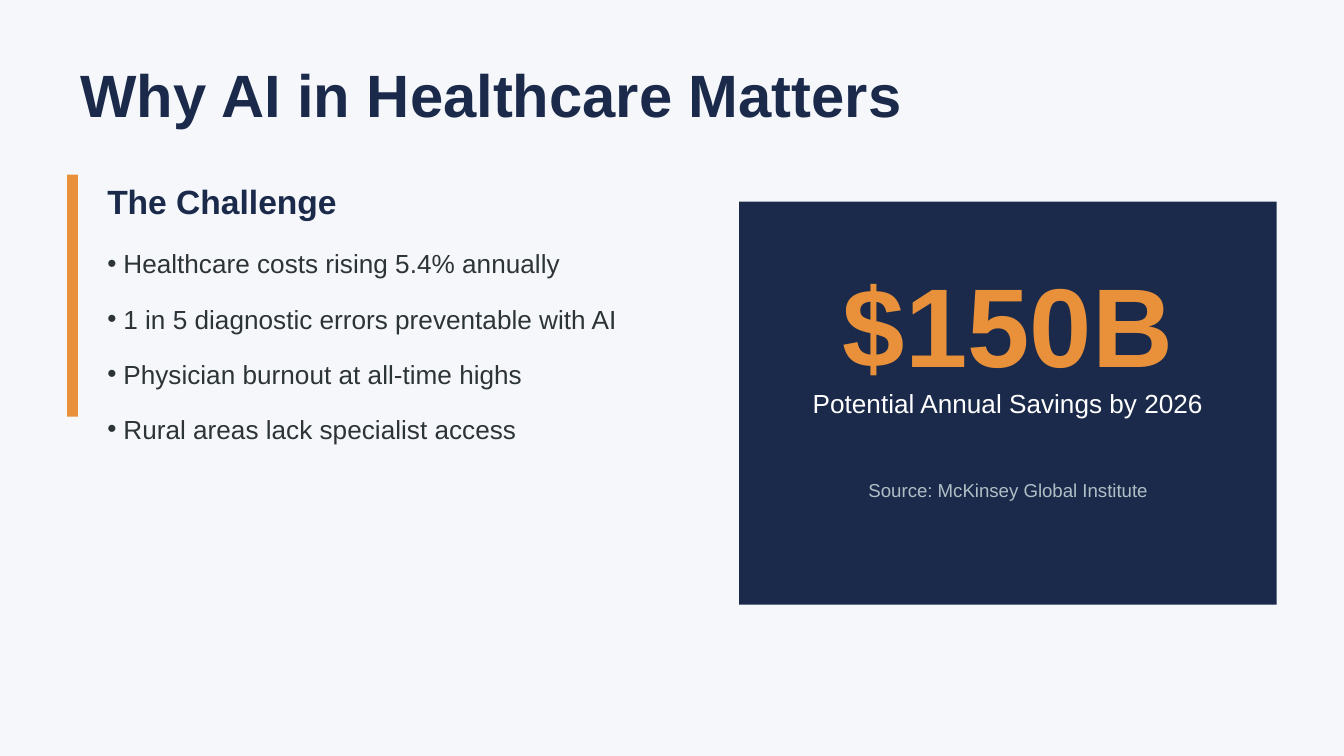
from lxml import etree
from pptx import Presentation
from pptx.dml.color import RGBColor
from pptx.enum.shapes import MSO_SHAPE
from pptx.enum.text import MSO_ANCHOR, MSO_AUTO_SIZE, PP_ALIGN
from pptx.oxml.ns import qn
from pptx.util import Inches, Pt

RECTANGLE = MSO_SHAPE.RECTANGLE
MIDDLE = MSO_ANCHOR.MIDDLE
NO_AUTOFIT = MSO_AUTO_SIZE.NONE
LEFT, CENTER = PP_ALIGN.LEFT, PP_ALIGN.CENTER

BACKGROUND = RGBColor(0xF5, 0xF7, 0xFA)
NAVY = RGBColor(0x1B, 0x2A, 0x4A)
ORANGE = RGBColor(0xE8, 0x91, 0x3A)
BODY = RGBColor(0x2D, 0x34, 0x36)
WHITE = RGBColor(0xFF, 0xFF, 0xFF)
MUTED = RGBColor(0xB0, 0xBE, 0xC5)


class SlideBuilder:
    font_name = "Arial"
    bullet_indent = Inches(0.12)
    bullet_gap = Pt(12.7)

    def __init__(self, presentation):
        title_only = presentation.slide_layouts[5]
        self.slide = presentation.slides.add_slide(title_only)
        fill = self.slide.background.fill
        fill.solid()
        fill.fore_color.rgb = BACKGROUND

    def format_text(self, frame, size, color, bold, alignment):
        frame_values = {"word_wrap": True, "auto_size": NO_AUTOFIT,
                        "vertical_anchor": MIDDLE}
        for name, value in frame_values.items():
            setattr(frame, name, value)
        font_values = {"name": self.font_name, "size": Pt(size), "bold": bold}
        for paragraph in frame.paragraphs:
            paragraph.alignment = alignment
            for run in paragraph.runs:
                for name, value in font_values.items():
                    setattr(run.font, name, value)
                run.font.color.rgb = color

    def title(self, text, box, size, color):
        shape = self.slide.shapes.title
        for name, value in zip(("left", "top", "width", "height"), box):
            setattr(shape, name, Inches(value))
        shape.text_frame.text = text
        self.format_text(shape.text_frame, size, color, True, LEFT)

    def text(self, text, box, size, color, bold=False, alignment=LEFT):
        shape = self.slide.shapes.add_textbox(*map(Inches, box))
        shape.text_frame.text = text
        self.format_text(shape.text_frame, size, color, bold, alignment)
        return shape

    def bullets(self, items, box, size, color):
        shape = self.text("\n".join(items), box, size, color)
        for index, paragraph in enumerate(shape.text_frame.paragraphs):
            if index:
                paragraph.space_before = self.bullet_gap
            properties = paragraph._p.get_or_add_pPr()
            properties.set("marL", str(self.bullet_indent))
            properties.set("indent", str(-self.bullet_indent))
            etree.SubElement(properties, qn("a:buFont"), typeface=self.font_name)
            etree.SubElement(properties, qn("a:buChar"), char="•")

    def rectangle(self, box, color):
        shape = self.slide.shapes.add_shape(RECTANGLE, *map(Inches, box))
        shape.shadow.inherit = False
        shape.fill.solid()
        shape.fill.fore_color.rgb = color
        shape.line.fill.background()


def main():
    # Widescreen page, 16:9
    presentation = Presentation()
    presentation.slide_width = Inches(10)
    presentation.slide_height = Inches(10 * 9 / 16)
    builder = SlideBuilder(presentation)

    builder.title("Why AI in Healthcare Matters", (0.5, 0.4, 9, 0.6), 32, NAVY)

    # Challenge column
    builder.rectangle((0.5, 1.3, 0.08, 1.8), ORANGE)
    builder.text("The Challenge", (0.7, 1.3, 4, 0.4), 18, NAVY, bold=True)
    challenges = [
        "Healthcare costs rising 5.4% annually",
        "1 in 5 diagnostic errors preventable with AI",
        "Physician burnout at all-time highs",
        "Rural areas lack specialist access",
    ]
    builder.bullets(challenges, (0.7, 1.8, 4.5, 1.55), 14, BODY)

    # Savings card
    card_left, card_width = 5.5, 4
    builder.rectangle((card_left, 1.5, card_width, 3), NAVY)
    card_lines = [
        ("$150B", 2, 0.8, 60, ORANGE, True),
        ("Potential Annual Savings by 2026", 2.8, 0.4, 14, WHITE, False),
        ("Source: McKinsey Global Institute", 3.5, 0.3, 10, MUTED, False),
    ]
    for text, top, height, size, color, bold in card_lines:
        box = (card_left, top, card_width, height)
        builder.text(text, box, size, color, bold, CENTER)

    presentation.save("out.pptx")


if __name__ == "__main__":
    main()
